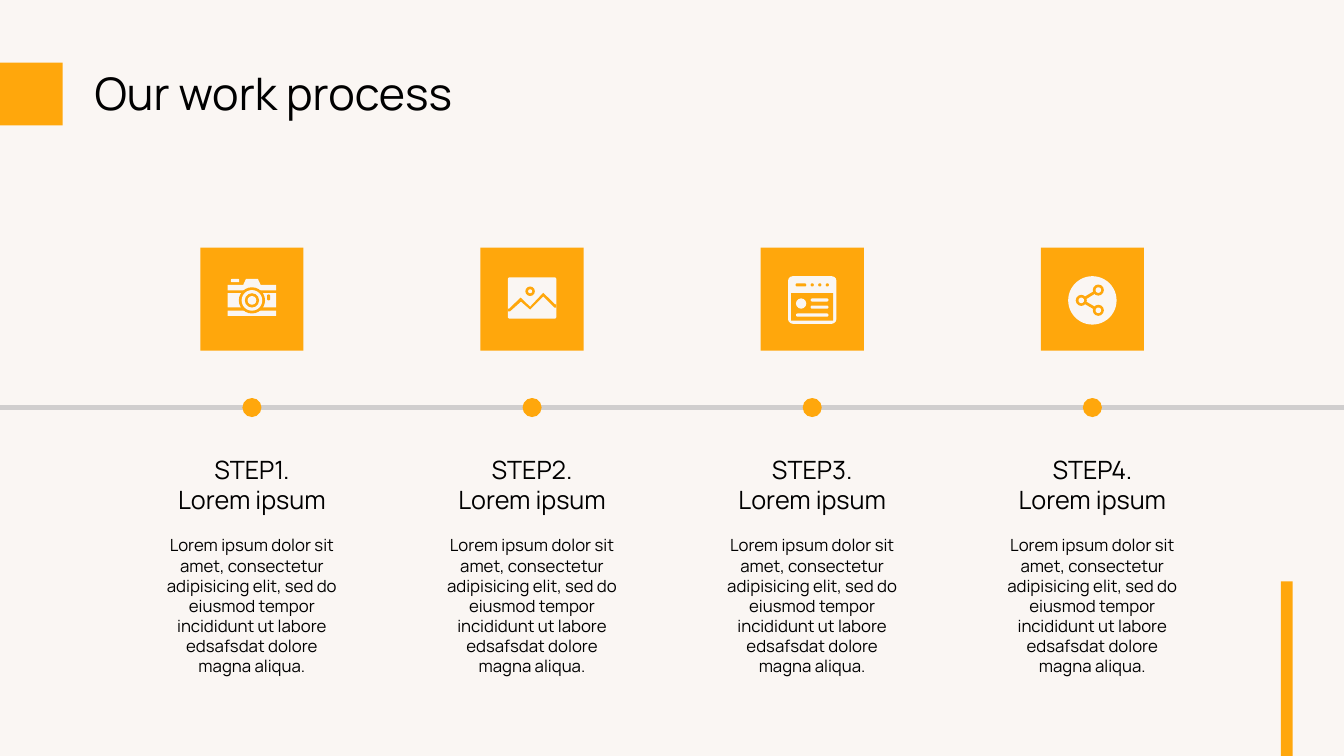
"""Build the "Our work process" slide: four steps along a timeline."""
import dataclasses

import pptx
import pptx.dml.color
import pptx.enum.shapes
import pptx.enum.text
import pptx.oxml
import pptx.util

Cm = pptx.util.Cm
Preset = pptx.enum.shapes.MSO_SHAPE
Align = pptx.enum.text.PP_ALIGN

ORANGE, CREAM, BLACK, GREY = "FFA70C", "FAF6F3", "000000", "D0CECE"
WIDTH, HEIGHT = 33.87, 19.05
FIRST_CENTRE, STEP_PITCH = 6.35, 7.06
ICON_CENTRE, TIMELINE = 7.56, 10.27
SQUARE, DOT, COLUMN = 2.6, 0.48, 5.13
DESCRIPTION = (
    "Lorem ipsum dolor sit amet, consectetur adipisicing elit, sed do eiusmod "
    "tempor incididunt ut labore edsafsdat dolore magna aliqua."
)


@dataclasses.dataclass(frozen=True)
class Box:
    left: float
    top: float
    width: float
    height: float
    colour: str = ORANGE
    preset: Preset = Preset.RECTANGLE
    rounding: float = 0.0


@dataclasses.dataclass(frozen=True)
class Outline:
    points: tuple[tuple[float, float], ...]
    colour: str


@dataclasses.dataclass(frozen=True)
class Step:
    heading: str
    icon: list[Box | Outline]


def disc(x: float, y: float, radius: float, colour: str) -> Box:
    return Box(x - radius, y - radius, 2 * radius, 2 * radius, colour, Preset.OVAL)


def bar(left: float, top: float, width: float, height: float, colour: str, rounding: float = 0.5) -> Box:
    return Box(left, top, width, height, colour, Preset.ROUNDED_RECTANGLE, rounding)


CAMERA = [
    Outline(((-0.61, -0.38), (-0.22, -0.38), (-0.15, -0.53), (0.15, -0.53),
             (0.22, -0.38), (0.61, -0.38), (0.61, -0.24), (-0.61, -0.24)), CREAM),
    Box(-0.61, -0.17, 1.22, 0.36, CREAM),
    Box(-0.61, 0.27, 1.22, 0.13, CREAM),
    *(disc(0, 0.01, radius, colour) for radius, colour in
      ((0.33, ORANGE), (0.26, CREAM), (0.18, ORANGE), (0.11, CREAM))),
    bar(-0.53, -0.53, 0.21, 0.08, CREAM, 0.3),
    bar(0.38, -0.14, 0.08, 0.15, ORANGE),
]
LANDSCAPE = [
    bar(-0.61, -0.57, 1.22, 1.04, CREAM, 0.04),
    disc(-0.05, -0.22, 0.12, ORANGE),
    disc(-0.05, -0.22, 0.05, CREAM),
    Outline(((-0.61, 0.22), (-0.58, 0.22), (-0.29, -0.06), (-0.05, 0.17), (0.28, -0.18),
             (0.58, 0.11), (0.61, 0.11), (0.61, 0.19), (0.56, 0.19), (0.28, -0.09),
             (-0.05, 0.24), (-0.28, 0.04), (-0.56, 0.29), (-0.61, 0.29)), ORANGE),
]
BROWSER = [
    bar(-0.61, -0.6, 1.22, 1.2, CREAM, 0.1),
    Box(-0.53, -0.17, 1.06, 0.69),
    bar(-0.42, -0.42, 0.27, 0.08, ORANGE),
    *(disc(x, -0.38, 0.04, ORANGE) for x in (0, 0.19, 0.38)),
    disc(-0.28, 0.09, 0.13, CREAM),
    *(bar(left, top, 0.41 - left, 0.08, CREAM)
      for left, top in ((-0.04, -0.04), (-0.04, 0.14), (-0.41, 0.34))),
]
SHARE_NODES = ((-0.28, 0.01), (0.15, -0.25), (0.15, 0.26))
SHARE = [
    disc(0, 0.01, 0.61, CREAM),
    Outline(((0.15, -0.29), (0.15, -0.21), (-0.21, 0.01),
             (0.15, 0.22), (0.15, 0.3), (-0.35, 0.01)), ORANGE),
    *(disc(x, y, radius, colour) for x, y in SHARE_NODES
      for radius, colour in ((0.14, ORANGE), (0.07, CREAM))),
]
STEPS = [
    Step(f"STEP{number}.", icon)
    for number, icon in enumerate((CAMERA, LANDSCAPE, BROWSER, SHARE), 1)
]


def rgb(colour: str) -> pptx.dml.color.RGBColor:
    return pptx.dml.color.RGBColor.from_string(colour)


def paint(shape, colour: str) -> None:
    shape.shadow.inherit = False
    shape.fill.solid()
    shape.fill.fore_color.rgb = rgb(colour)
    shape.line.fill.background()


def draw_box(shapes, box: Box, x: float = 0, y: float = 0) -> None:
    shape = shapes.add_shape(box.preset, Cm(x + box.left), Cm(y + box.top), Cm(box.width), Cm(box.height))
    if box.rounding:
        shape.adjustments[0] = box.rounding
    paint(shape, box.colour)


def draw_outline(shapes, outline: Outline, x: float, y: float) -> None:
    start, *others = [(Cm(x + dx), Cm(y + dy)) for dx, dy in outline.points]
    builder = shapes.build_freeform(*start)
    builder.add_line_segments(others, close=True)
    paint(builder.convert_to_shape(), outline.colour)


def draw_icon(shapes, icon: list[Box | Outline], x: float, y: float) -> None:
    group = shapes.add_group_shape()
    for part in icon:
        draw = draw_box if isinstance(part, Box) else draw_outline
        draw(group.shapes, part, x, y)


def write(shape, lines: list[str], size: int, alignment: Align) -> None:
    frame = shape.text_frame
    frame.text = "\n".join(lines)
    frame_format = {
        "word_wrap": True,
        "auto_size": pptx.enum.text.MSO_AUTO_SIZE.SHAPE_TO_FIT_TEXT,
        "vertical_anchor": pptx.enum.text.MSO_ANCHOR.TOP,
    }
    for attribute, value in frame_format.items():
        setattr(frame, attribute, value)
    font_format = {"name": "Manrope", "size": pptx.util.Pt(size), "bold": False}
    for paragraph in frame.paragraphs:
        paragraph.alignment = alignment
        for run in paragraph.runs:
            for attribute, value in font_format.items():
                setattr(run.font, attribute, value)
            run.font.color.rgb = rgb(BLACK)


def draw_step(shapes, step: Step, centre: float) -> None:
    draw_box(shapes, Box(-SQUARE / 2, -SQUARE / 2, SQUARE, SQUARE), centre, ICON_CENTRE - 0.02)
    draw_icon(shapes, step.icon, centre, ICON_CENTRE)
    left = Cm(centre - COLUMN / 2)
    heading = shapes.add_textbox(left, Cm(11.33), Cm(COLUMN), Cm(1.8))
    write(heading, [step.heading, "Lorem ipsum"], 18, Align.CENTER)
    description = shapes.add_textbox(left, Cm(13.36), Cm(COLUMN), Cm(3.84))
    write(description, [DESCRIPTION], 12, Align.CENTER)


def draw_timeline(shapes, centres: list[float]) -> None:
    timeline = shapes.add_connector(
        pptx.enum.shapes.MSO_CONNECTOR.STRAIGHT, 0, Cm(TIMELINE), Cm(WIDTH), Cm(TIMELINE))
    timeline.line.color.rgb = rgb(GREY)
    timeline.line.width = pptx.util.Pt(3.5)
    properties = timeline._element.spPr
    properties.append(pptx.oxml.parse_xml(
        '<a:effectLst xmlns:a="http://schemas.openxmlformats.org/drawingml/2006/main"/>'))
    for centre in centres:
        draw_box(shapes, disc(centre, TIMELINE, DOT / 2, ORANGE))


def main() -> None:
    deck = pptx.Presentation()
    deck.slide_width, deck.slide_height = Cm(WIDTH), Cm(HEIGHT)
    slide = deck.slides.add_slide(deck.slide_layouts[5])
    slide.background.fill.solid()
    slide.background.fill.fore_color.rgb = rgb(CREAM)

    title = slide.shapes.title
    title_place = {"left": Cm(2.13), "top": Cm(1.52), "width": Cm(14.45), "height": Cm(1.63)}
    for attribute, value in title_place.items():
        setattr(title, attribute, value)
    write(title, ["Our work process"], 32, Align.LEFT)

    for accent in (Box(0, 1.58, 1.58, 1.58), Box(32.28, 14.65, 0.3, 4.4)):
        draw_box(slide.shapes, accent)
    centres = [FIRST_CENTRE + index * STEP_PITCH for index in range(len(STEPS))]
    for step, centre in zip(STEPS, centres):
        draw_step(slide.shapes, step, centre)
    draw_timeline(slide.shapes, centres)
    deck.save("out.pptx")


if __name__ == "__main__":
    main()
